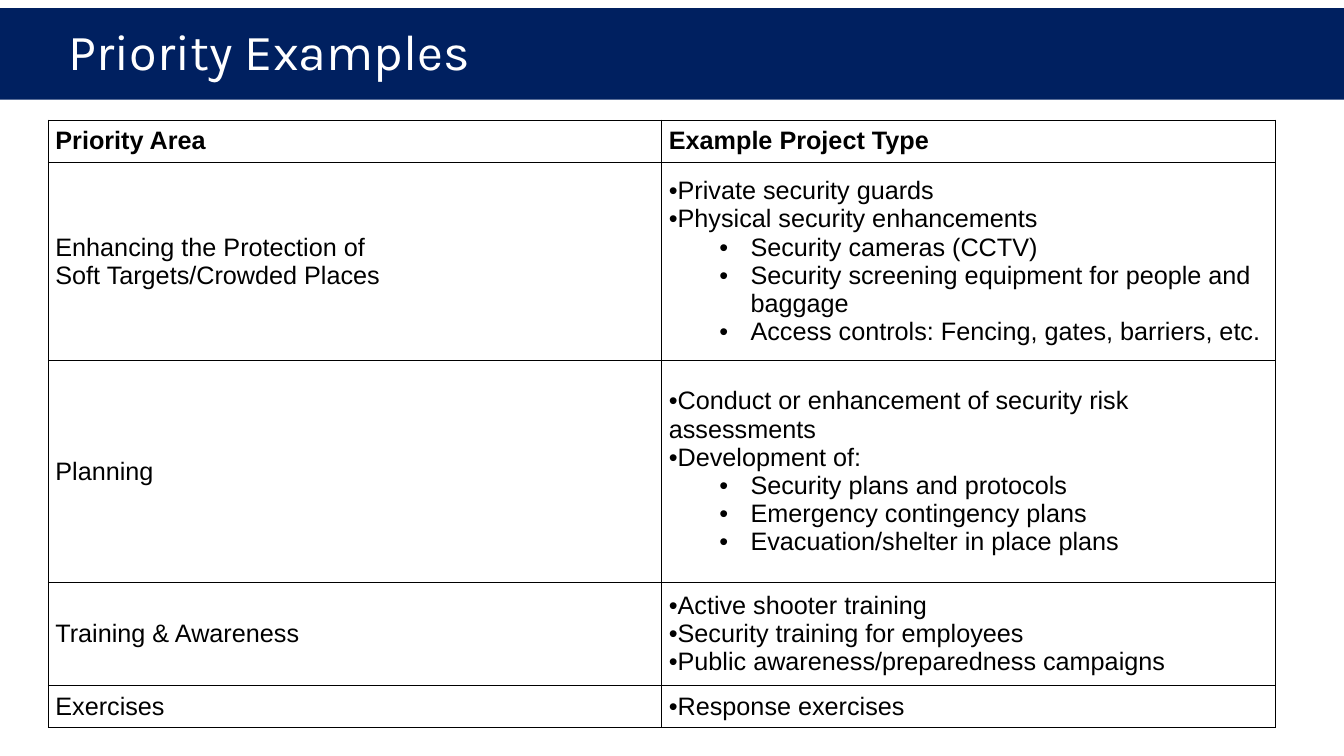
"""Build the priority examples slide."""
from lxml import etree
from pptx import Presentation
from pptx.dml.color import RGBColor
from pptx.enum import shapes, text
from pptx.oxml import ns
from pptx.util import Inches, Pt

HEX = {"navy": "002060", "white": "FFFFFF", "black": "000000"}
HEADS = ["Priority Area", "Example Project Type"]
AREAS = [
    ("Enhancing the Protection of\nSoft Targets/Crowded Places", [
        (0, "Private security guards"),
        (0, "Physical security enhancements"),
        (1, "Security cameras (CCTV)"),
        (1, "Security screening equipment for people and baggage"),
        (1, "Access controls: Fencing, gates, barriers, etc.")]),
    ("Planning", [
        (0, "Conduct or enhancement of security risk assessments"),
        (0, "Development of:"),
        (1, "Security plans and protocols"),
        (1, "Emergency contingency plans"),
        (1, "Evacuation/shelter in place plans")]),
    ("Training & Awareness", [
        (0, "Active shooter training"),
        (0, "Security training for employees"),
        (0, "Public awareness/preparedness campaigns")]),
    ("Exercises", [(0, "Response exercises")]),
]
HEIGHTS = [0.4, 1.97, 2.2, 1.02, 0.4]


class Deck:
    """Hold the style and the current slide."""

    def __init__(self):
        self.prs = Presentation()
        self.prs.slide_width = Inches(13.33)
        self.prs.slide_height = Inches(7.5)
        self.slide = self.prs.slides.add_slide(self.prs.slide_layouts[5])

    def color(self, name):
        return RGBColor.from_string(HEX[name])

    def paint(self, fill, name):
        fill.solid()
        fill.fore_color.rgb = self.color(name)

    def label(self, para, words, size, face, ink, bold=False):
        for n, line in enumerate(words.split("\n")):
            if n:
                para.add_line_break()
            run = para.add_run()
            run.text = line
            font = run.font
            font.size, font.name, font.bold = Pt(size), face, bold
            font.color.rgb = self.color(ink)

    def band(self, x, y, w, h):
        bar = self.slide.shapes.add_shape(
            shapes.MSO_SHAPE.RECTANGLE, *map(Inches, (x, y, w, h)))
        bar.shadow.inherit = False
        self.paint(bar.fill, "navy")
        bar.line.fill.background()
        self.slide.shapes.title._element.addprevious(bar._element)

    def title(self, words, x, y, w, h):
        box = self.slide.shapes.title
        box.left, box.top, box.width, box.height = map(Inches, (x, y, w, h))
        frame = box.text_frame
        frame.auto_size = text.MSO_AUTO_SIZE.NONE
        frame.vertical_anchor = text.MSO_ANCHOR.MIDDLE
        para = frame.paragraphs[0]
        para.alignment = text.PP_ALIGN.LEFT
        para.line_spacing = 0.9
        self.label(para, words, 36, "Karla", "white")

    def bullet(self, para, level):
        para.level = level
        props = para._p.get_or_add_pPr()
        props.set("marL", str(Inches(0.81 * level)))
        props.set("indent", str(Inches(-0.31 * level)))
        etree.SubElement(props, ns.qn("a:buFont")).set("typeface", "Arial")
        etree.SubElement(props, ns.qn("a:buChar")).set("char", "•")

    def border(self, cell):
        props = cell._tc.get_or_add_tcPr()
        for n, side in enumerate("LRTB"):
            line = etree.Element(ns.qn(f"a:ln{side}"), w=str(Pt(0.75)))
            fill = etree.SubElement(line, ns.qn("a:solidFill"))
            etree.SubElement(fill, ns.qn("a:srgbClr")).set("val", HEX["black"])
            props.insert(n, line)

    def cell(self, cell, items, pad, bold=False):
        self.paint(cell.fill, "white")
        self.border(cell)
        cell.vertical_anchor = text.MSO_ANCHOR.MIDDLE
        cell.margin_left = cell.margin_right = Inches(0.07)
        cell.margin_top = cell.margin_bottom = Inches(pad)
        frame = cell.text_frame
        for n, (level, words) in enumerate(items):
            para = frame.add_paragraph() if n else frame.paragraphs[0]
            if level is not None:
                self.bullet(para, level)
            self.label(para, words, 18, "Arial", "black", bold)

    def table(self, heads, areas, heights, x, y, w):
        grid = self.slide.shapes.add_table(
            len(heights), len(heads),
            *map(Inches, (x, y, w, sum(heights)))).table
        grid.horz_banding = False
        for row, high in zip(grid.rows, heights):
            row.height = Inches(high)
        for n, head in enumerate(heads):
            self.cell(grid.cell(0, n), [(None, head)], 0.07, True)
        for n, (area, items) in enumerate(areas, 1):
            pad = 0.07 if n == len(areas) else 0.04
            self.cell(grid.cell(n, 0), [(None, area)], pad)
            self.cell(grid.cell(n, 1), items, 0.04)


def main():
    deck = Deck()
    deck.band(0, 0.08, 13.33, 0.91)
    deck.title("Priority Examples", 0.58, 0.08, 12.25, 0.91)
    deck.table(HEADS, AREAS, HEIGHTS, 0.48, 1.19, 12.17)
    deck.prs.save("out.pptx")


if __name__ == "__main__":
    main()
